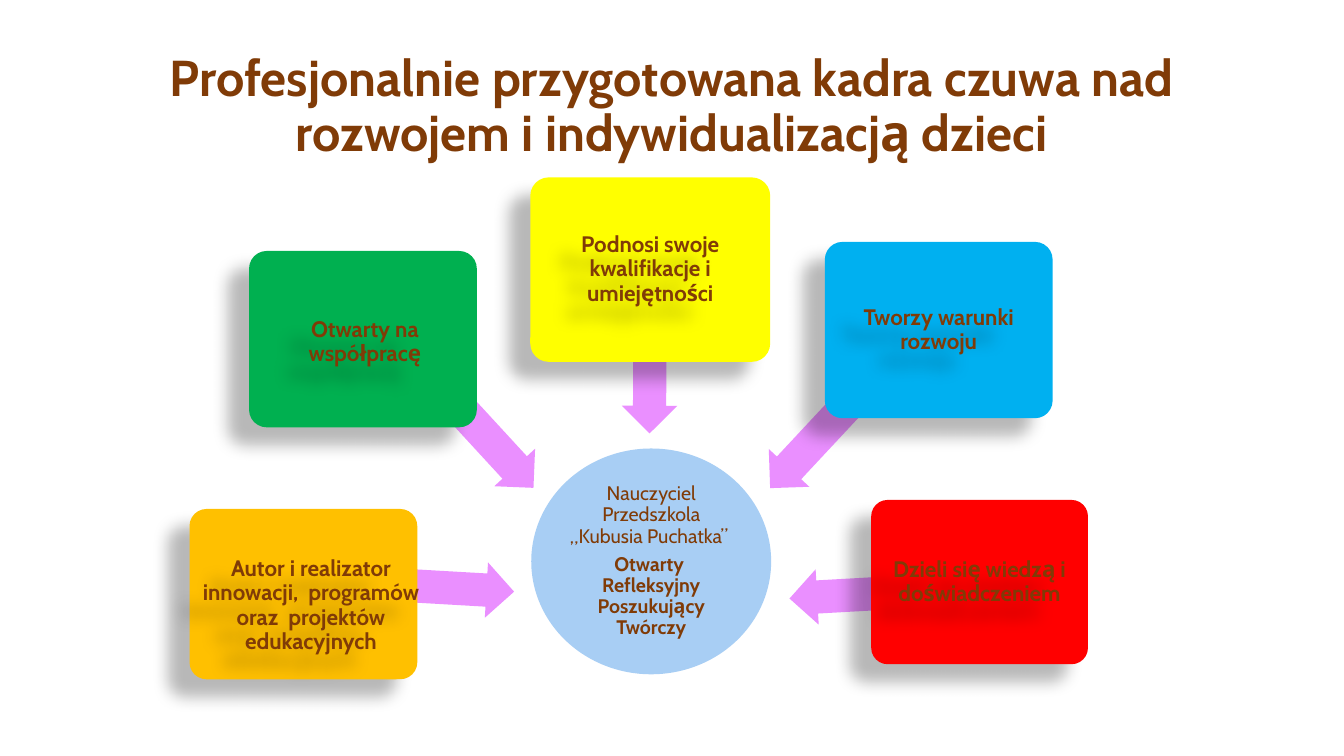
from lxml.etree import SubElement
from pptx import Presentation
from pptx.dml.color import RGBColor
from pptx.enum.shapes import MSO_SHAPE
from pptx.enum.text import MSO_ANCHOR, PP_ALIGN
from pptx.oxml.ns import qn
from pptx.util import Inches, Pt

COLORS = {
    "text": "803B07", "arrow": "EA8FFF", "circle": "A8CEF4", "shadow": "000000",
    "orange": "FFC000", "green": "00B050", "blue": "00B0F0",
    "yellow": "FFFF00", "red": "FF0000",
}
FONT = "Cabin"
WIDTH, HEIGHT = 13.33, 7.5

# Boxes are left, top, width, height in percent of the slide.
TITLE = "Profesjonalnie przygotowana kadra czuwa nad rozwojem i indywidualizacją dzieci"
TITLE_BOX = (8.7, 4.4, 82.52, 17.73)

TEACHER = [
    ("Nauczyciel Przedszkola „Kubusia Puchatka” ", False),
    ("Otwarty  Refleksyjny Poszukujący Twórczy", True),
]
CIRCLE_BOX = (39.53, 59.33, 17.85, 29.87)
TEACHER_BOX = (42.16, 63.73, 12.6, 21.07)

# Centre x, centre y, length, rotation.
ARROWS = [
    (32.52, 77.67, 11.48, 183.3),
    (35.45, 56.33, 12.53, 227.4),
    (48.35, 45.67, 13.13, 270.2),
    (61.63, 56.33, 12.68, 313),
    (64.55, 78.6, 11.63, 356.8),
]
ARROW_HEIGHT = 7.33

# Text, colour, card box, text box where it departs from the usual margin.
CARDS = [
    ("Autor i realizator innowacji,  programów oraz  projektów edukacyjnych", "orange",
     (14.1, 67.33, 16.95, 22.53), (13.35, 68, 19.58, 24.27)),
    ("Otwarty na współpracę", "green",
     (18.53, 33.2, 16.95, 23.33), (19.05, 34.27, 16.2, 22)),
    ("Tworzy warunki rozwoju", "blue", (61.37, 32, 16.95, 23.33), None),
    ("Podnosi swoje kwalifikacje i umiejętności", "yellow",
     (39.46, 23.47, 17.85, 24.4), None),
    ("Dzieli się wiedzą i doświadczeniem", "red", (64.82, 66.13, 16.13, 21.73), None),
]
MARGIN_X, MARGIN_Y = 0.38, 0.67


def place(box):
    return [Inches(share * side / 100) for share, side in zip(box, (WIDTH, HEIGHT) * 2)]


def inner(box):
    left, top, width, height = box
    return left + MARGIN_X, top + MARGIN_Y, width - 2 * MARGIN_X, height - 2 * MARGIN_Y


def add_shadow(sp):
    sp.shadow.inherit = False
    effects = sp.element.spPr.find(qn("a:effectLst"))
    shadow = SubElement(effects, qn("a:outerShdw"), blurRad=str(Pt(11.8)),
                        dist=str(Pt(19.7)), dir=str(141 * 60000), rotWithShape="0")
    color = SubElement(shadow, qn("a:srgbClr"), val=COLORS["shadow"])
    SubElement(color, qn("a:alpha"), val="28000")


def add_figure(s, kind, box, color, adjustments=()):
    sp = s.shapes.add_shape(kind, *place(box))
    sp.shadow.inherit = False
    sp.fill.solid()
    sp.fill.fore_color.rgb = RGBColor.from_string(COLORS[color])
    sp.line.fill.background()
    for i, value in enumerate(adjustments):
        sp.adjustments[i] = value
    return sp


def add_text(s, box, paragraphs, size, inset=None, anchor=MSO_ANCHOR.MIDDLE, after=0.35):
    sp = s.shapes.add_textbox(*place(box))
    tf = sp.text_frame
    tf.word_wrap = True
    tf.vertical_anchor = anchor
    if inset is not None:
        tf.margin_left = tf.margin_right = tf.margin_top = tf.margin_bottom = Inches(inset)
    for i, (text, bold) in enumerate(paragraphs):
        p = tf.add_paragraph() if i else tf.paragraphs[0]
        p.text = text
        p.alignment = PP_ALIGN.CENTER
        p.line_spacing = 0.9
        p.space_after = Pt(size * after)
        p.font.name = FONT
        p.font.size = Pt(size)
        p.font.bold = bold
        p.font.color.rgb = RGBColor.from_string(COLORS["text"])
    return sp


def main():
    prs = Presentation()
    prs.slide_width, prs.slide_height = Inches(WIDTH), Inches(HEIGHT)
    s = prs.slides.add_slide(prs.slide_layouts[6])

    add_text(s, TITLE_BOX, [(TITLE, True)], 36, anchor=MSO_ANCHOR.BOTTOM, after=0)
    add_figure(s, MSO_SHAPE.OVAL, CIRCLE_BOX, "circle")
    add_text(s, TEACHER_BOX, TEACHER, 14, inset=0.01)

    for x, y, length, angle in ARROWS:
        box = (x - length / 2, y - ARROW_HEIGHT / 2, length, ARROW_HEIGHT)
        arrow = add_figure(s, MSO_SHAPE.LEFT_ARROW, box, "arrow", (0.6, 0.5))
        arrow.rotation = angle

    for text, color, box, text_box in CARDS:
        add_shadow(add_figure(s, MSO_SHAPE.ROUNDED_RECTANGLE, box, color, (0.1,)))
        add_shadow(add_text(s, text_box or inner(box), [(text, True)], 16, inset=0.03))

    prs.save("out.pptx")


if __name__ == "__main__":
    main()
